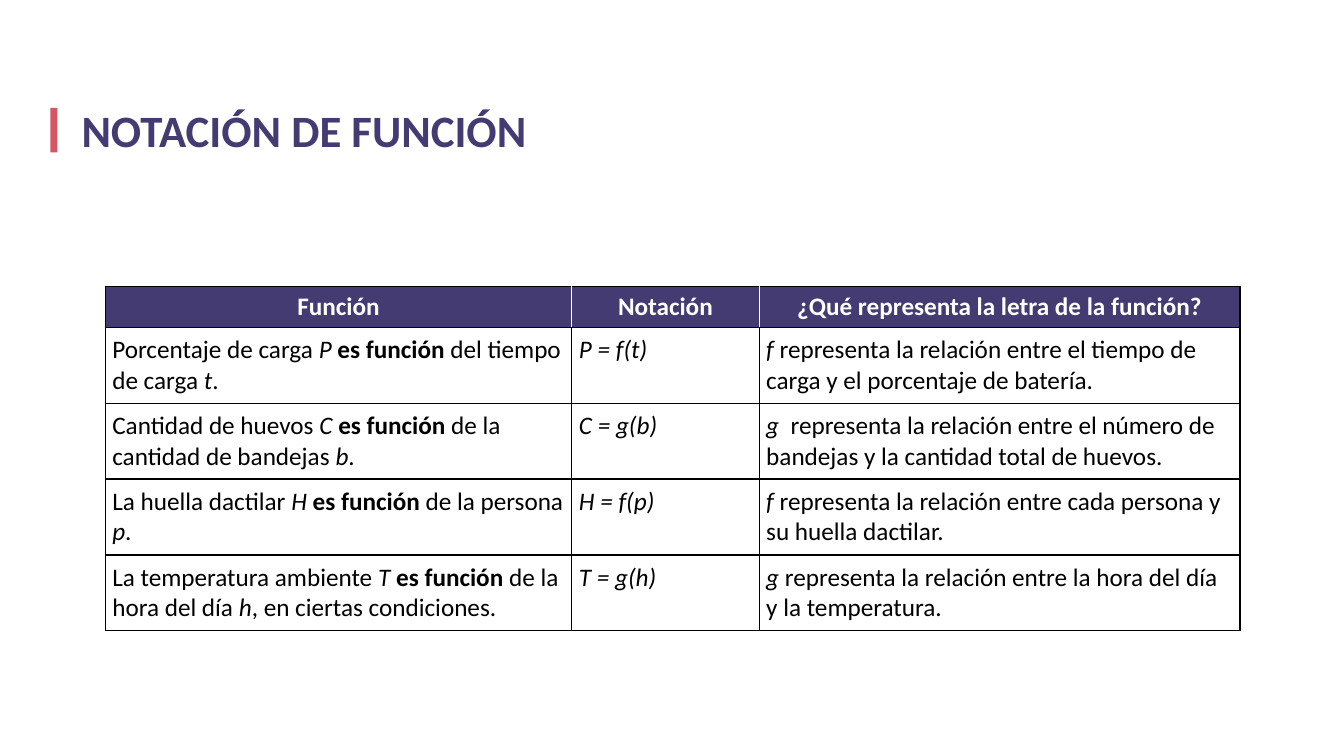
from dataclasses import dataclass

from lxml.etree import SubElement
from pptx import Presentation
from pptx.dml.color import RGBColor
from pptx.enum.shapes import MSO_SHAPE
from pptx.enum.text import MSO_ANCHOR, MSO_AUTO_SIZE, PP_ALIGN
from pptx.oxml.ns import qn
from pptx.slide import Slide
from pptx.table import Table, _Cell
from pptx.util import Cm, Pt


@dataclass(frozen=True)
class Theme:
    font: str = "Calibri"
    title_size: int = 32
    table_size: int = 18
    purple: str = "433B71"
    coral: str = "D65664"
    black: str = "000000"
    white: str = "FFFFFF"


@dataclass(frozen=True)
class Piece:
    text: str
    bold: bool = False
    italic: bool = False


@dataclass(frozen=True)
class FunctionRow:
    quantity: str
    dependent: str
    source: str
    independent: str
    ending: str
    notation: str
    letter: str
    meaning: str

    def cells(self) -> list[list[Piece]]:
        return [
            [
                Piece(self.quantity + " "),
                Piece(self.dependent + " ", italic=True),
                Piece("es función ", bold=True),
                Piece(self.source + " "),
                Piece(self.independent, italic=True),
                Piece(self.ending),
            ],
            [Piece(self.notation, italic=True)],
            [Piece(self.letter + " ", italic=True), Piece(self.meaning)],
        ]


THEME = Theme()
HEADINGS = ["Función", "Notación", "¿Qué representa la letra de la función?"]
COLUMN_WIDTHS = [Cm(11.76), Cm(4.72), Cm(12.12)]
HEADER_HEIGHT = Cm(1.04)
ROW_HEIGHT = Cm(1.91)
FUNCTIONS = [
    FunctionRow("Porcentaje de carga", "P", "del tiempo de carga", "t", ".", "P = f(t)", "f",
                "representa la relación entre el tiempo de carga y el porcentaje de batería."),
    FunctionRow("Cantidad de huevos", "C", "de la cantidad de bandejas", "b", ".", "C = g(b)", "g ",
                "representa la relación entre el número de bandejas y la cantidad total de huevos."),
    FunctionRow("La huella dactilar", "H", "de la persona", "p", ".", "H = f(p)", "f",
                "representa la relación entre cada persona y su huella dactilar."),
    FunctionRow("La temperatura ambiente", "T", "de la hora del día", "h", ", en ciertas condiciones.",
                "T = g(h)", "g", "representa la relación entre la hora del día y la temperatura."),
]


def style_font(font, size: int, color: str, bold: bool = False, italic: bool = False) -> None:
    font.name = THEME.font
    font.size = Pt(size)
    font.color.rgb = RGBColor.from_string(color)
    font.bold = bold
    font.italic = italic


def set_borders(cell: _Cell, left: str, right: str) -> None:
    """Draw one-point borders; the top and bottom ones are black."""
    properties = cell._tc.get_or_add_tcPr()
    colors = {"a:lnL": left, "a:lnR": right, "a:lnT": THEME.black, "a:lnB": THEME.black}
    for tag, color in colors.items():
        line = SubElement(properties, qn(tag), w=str(Pt(1)))
        fill = SubElement(line, qn("a:solidFill"))
        SubElement(fill, qn("a:srgbClr"), val=color)


def add_title(slide: Slide, text: str) -> None:
    bar = slide.shapes.add_shape(MSO_SHAPE.RECTANGLE, Cm(1.27), Cm(2.72), Cm(0.18), Cm(1.12))
    bar.shadow.inherit = False
    bar.fill.solid()
    bar.fill.fore_color.rgb = RGBColor.from_string(THEME.coral)
    bar.line.fill.background()

    title = slide.shapes.title
    title.left, title.top, title.width, title.height = Cm(1.8), Cm(2.46), Cm(11.84), Cm(1.63)
    frame = title.text_frame
    frame.text = text
    frame.word_wrap = False
    frame.auto_size = MSO_AUTO_SIZE.NONE
    frame.vertical_anchor = MSO_ANCHOR.MIDDLE
    para = frame.paragraphs[0]
    para.alignment = PP_ALIGN.LEFT
    style_font(para.runs[0].font, THEME.title_size, THEME.purple, bold=True)


def fill_header(table: Table) -> None:
    last = len(HEADINGS) - 1
    for column, heading in enumerate(HEADINGS):
        cell = table.cell(0, column)
        set_borders(cell, THEME.white if column else THEME.black,
                    THEME.white if column < last else THEME.black)
        cell.fill.solid()
        cell.fill.fore_color.rgb = RGBColor.from_string(THEME.purple)
        cell.vertical_anchor = MSO_ANCHOR.MIDDLE
        cell.text_frame.text = heading
        para = cell.text_frame.paragraphs[0]
        para.alignment = PP_ALIGN.CENTER
        style_font(para.runs[0].font, THEME.table_size, THEME.white, bold=True)


def fill_cell(cell: _Cell, pieces: list[Piece]) -> None:
    set_borders(cell, THEME.black, THEME.black)
    cell.fill.background()
    cell.margin_left = cell.margin_right = cell.margin_top = cell.margin_bottom = Cm(0.18)
    para = cell.text_frame.paragraphs[0]
    for piece in pieces:
        span = para.add_run()
        span.text = piece.text
        style_font(span.font, THEME.table_size, THEME.black, piece.bold, piece.italic)


def add_function_table(slide: Slide) -> None:
    height = HEADER_HEIGHT + ROW_HEIGHT * len(FUNCTIONS)
    table = slide.shapes.add_table(len(FUNCTIONS) + 1, len(HEADINGS), Cm(2.65), Cm(7.21),
                                   sum(COLUMN_WIDTHS), height).table
    table.horz_banding = False
    for column, width in zip(table.columns, COLUMN_WIDTHS):
        column.width = width
    table.rows[0].height = HEADER_HEIGHT
    fill_header(table)
    for index, function in enumerate(FUNCTIONS, start=1):
        table.rows[index].height = ROW_HEIGHT
        for column, pieces in enumerate(function.cells()):
            fill_cell(table.cell(index, column), pieces)


def main() -> None:
    deck = Presentation()
    deck.slide_width, deck.slide_height = Cm(33.87), Cm(19.05)
    page = deck.slides.add_slide(deck.slide_layouts.get_by_name("Title Only"))
    add_title(page, "NOTACIÓN DE FUNCIÓN")
    add_function_table(page)
    deck.save("out.pptx")


if __name__ == "__main__":
    main()
